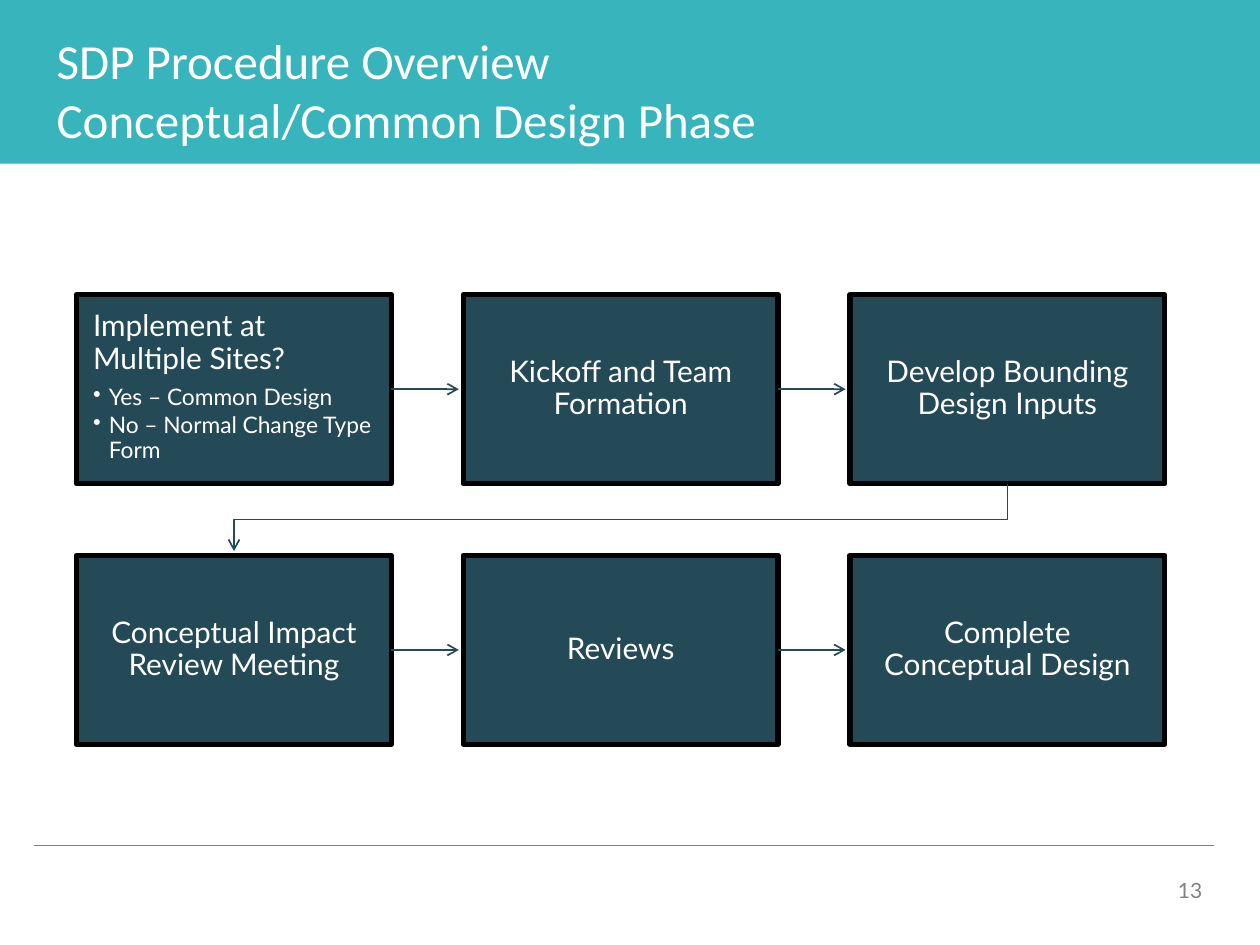
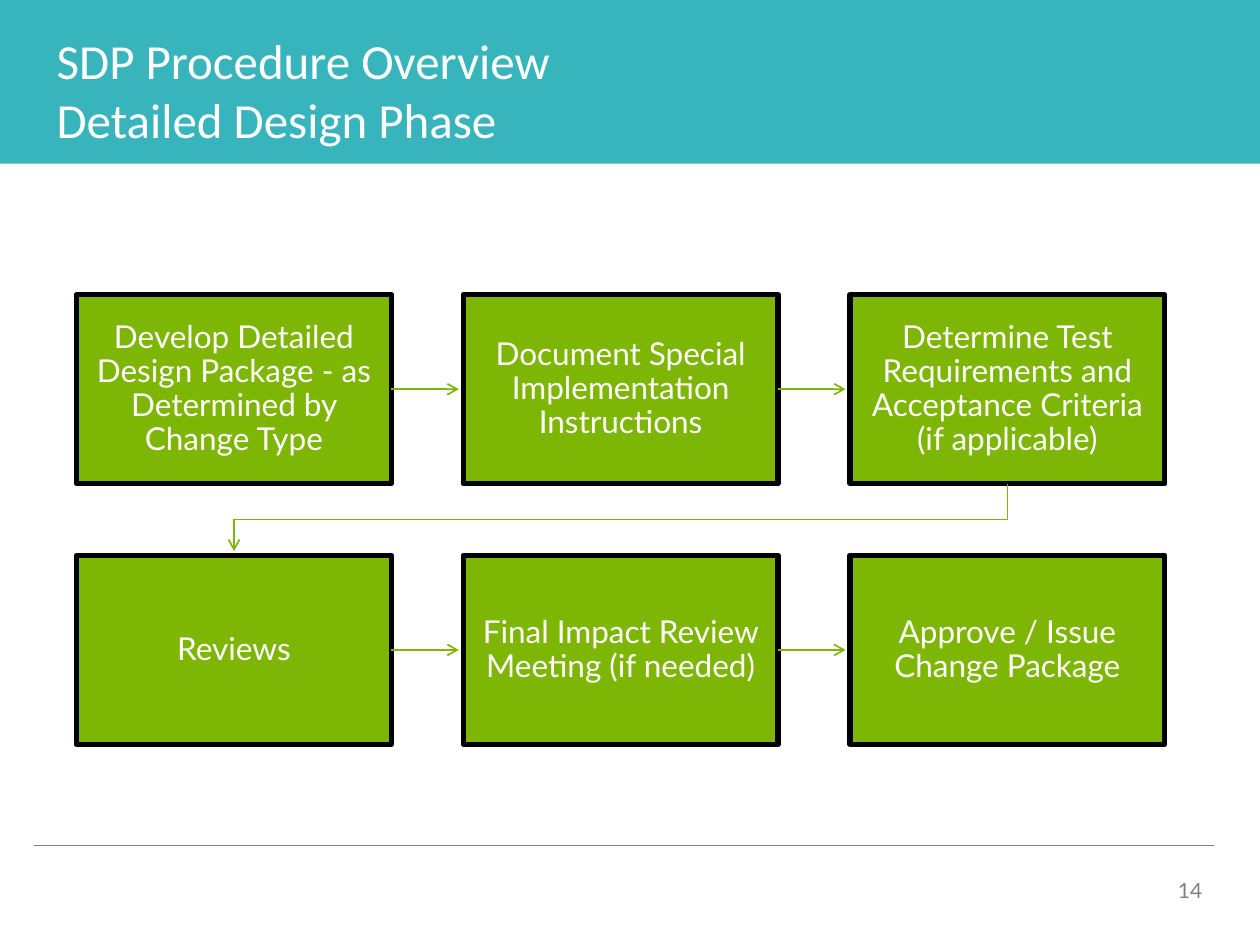
"""Build two process-flow slides for the design phases of the SDP procedure."""
import copy

import pptx
import pptx.dml.color
import pptx.enum.shapes
import pptx.enum.text
import pptx.oxml
import pptx.oxml.ns
import pptx.util
from lxml import etree

Pt = pptx.util.Pt
qn = pptx.oxml.ns.qn
SHAPE = pptx.enum.shapes.MSO_SHAPE
ANCHOR = pptx.enum.text.MSO_ANCHOR
ALIGN = pptx.enum.text.PP_ALIGN

TEAL, NAVY, GREEN = "38B4BC", "244A58", "7EB606"
WHITE, BLACK, GRAY = "FFFFFF", "000000", "808080"

COLUMNS = 3
LEFT, TOP = 43.7, 168.4
BOX_W, BOX_H = 180, 108
PITCH_X, PITCH_Y = 221, 149
ARROW_GAP = 2.5

PHASES = [
    {
        "number": "13", "color": NAVY, "size": 17, "inset": 9.5,
        "title": "SDP Procedure Overview\nConceptual/Common Design Phase",
        "steps": [
            ("Implement at Multiple Sites?", "Yes – Common Design",
             "No – Normal Change Type Form"),
            ("Kickoff and Team Formation",),
            ("Develop Bounding Design Inputs",),
            ("Conceptual Impact Review Meeting",),
            ("Reviews",),
            ("Complete Conceptual Design",),
        ],
    },
    {
        "number": "14", "color": GREEN, "size": 18, "inset": 10,
        "title": "SDP Procedure Overview\nDetailed Design Phase",
        "steps": [
            ("Develop Detailed Design Package - as Determined by Change Type",),
            ("Document Special Implementation Instructions",),
            ("Determine Test Requirements and Acceptance Criteria (if applicable)",),
            ("Reviews",),
            ("Final Impact Review Meeting (if needed)",),
            ("Approve / Issue Change Package",),
        ],
    },
]


def rgb(color):
    return pptx.dml.color.RGBColor.from_string(color)


def write(p, text, size=12, font="Lato", color=WHITE, align=ALIGN.LEFT,
          spacing=1.0, after=0, bullet=False):
    if bullet:
        p.level = 1
        pPr = p._p.get_or_add_pPr()
        pPr.set("marL", str(Pt(9)))
        pPr.set("indent", str(-Pt(9)))
        etree.SubElement(pPr, qn("a:buChar"), char="•")
    p.text = text
    p.alignment = align
    p.line_spacing = spacing
    p.space_before, p.space_after = Pt(0), Pt(after)
    for r in p.runs:
        r.font.size, r.font.name = Pt(size), font
        r.font.color.rgb = rgb(color)
    for br in p._p.findall(qn("a:br")):
        br.append(copy.deepcopy(p.runs[0]._r.rPr))


def set_frame(tf, inset, anchor, wrap=True):
    tf.margin_left = tf.margin_right = Pt(inset)
    tf.margin_top = tf.margin_bottom = Pt(inset)
    tf.vertical_anchor = anchor
    tf.word_wrap = wrap
    tf.auto_size = pptx.enum.text.MSO_AUTO_SIZE.NONE


def add_rect(s, x, y, w, h, fill, line=None):
    sp = s.shapes.add_shape(SHAPE.RECTANGLE, Pt(x), Pt(y), Pt(w), Pt(h))
    sp.shadow.inherit = False
    sp.fill.solid()
    sp.fill.fore_color.rgb = rgb(fill)
    if line:
        sp.line.color.rgb = rgb(line)
        sp.line.width = Pt(3)
    else:
        sp.line.fill.background()
    return sp


def style_line(sp, color, width, arrow=False):
    sp.line.color.rgb = rgb(color)
    sp.line.width = Pt(width)
    if arrow:
        etree.SubElement(sp.line._get_or_add_ln(), qn("a:tailEnd"), type="arrow")


def add_line(s, x1, y1, x2, y2, color, width, arrow=False):
    cn = s.shapes.add_connector(pptx.enum.shapes.MSO_CONNECTOR.STRAIGHT,
                                Pt(x1), Pt(y1), Pt(x2), Pt(y2))
    style_line(cn, color, width, arrow)
    etree.SubElement(cn.element.spPr, qn("a:effectLst"))
    return cn


def add_return_arrow(s, color):
    start_x = LEFT + (COLUMNS - 1) * PITCH_X + BOX_W / 2
    end_x = LEFT + BOX_W / 2
    start_y, end_y = TOP + BOX_H, TOP + PITCH_Y - ARROW_GAP
    mid_y = TOP + (BOX_H + PITCH_Y) / 2
    fb = s.shapes.build_freeform(Pt(start_x), Pt(start_y))
    fb.add_line_segments([(Pt(start_x), Pt(mid_y)), (Pt(end_x), Pt(mid_y)),
                          (Pt(end_x), Pt(end_y))], close=False)
    sp = fb.convert_to_shape()
    sp.shadow.inherit = False
    sp.fill.background()
    style_line(sp, color, 1, arrow=True)


def add_step(s, x, y, lines, color, size, inset):
    box = add_rect(s, x, y, BOX_W, BOX_H, color, BLACK)
    heading, *bullets = lines
    tf = box.text_frame
    set_frame(tf, inset, ANCHOR.TOP if bullets else ANCHOR.MIDDLE)
    write(tf.paragraphs[0], heading, size=size, spacing=0.9, after=6,
          align=ALIGN.LEFT if bullets else ALIGN.CENTER)
    for text in bullets:
        write(tf.add_paragraph(), text, size=13, spacing=0.9, after=2, bullet=True)
    return box


def add_flow(s, steps, color, size, inset):
    for i, lines in enumerate(steps):
        row, col = divmod(i, COLUMNS)
        x, y = LEFT + col * PITCH_X, TOP + row * PITCH_Y
        box = add_step(s, x, y, lines, color, size, inset)
        if col < COLUMNS - 1:
            mid_y = y + BOX_H / 2
            cn = add_line(s, x + BOX_W, mid_y, x + PITCH_X - ARROW_GAP, mid_y,
                          color, 1, arrow=True)
            cn.begin_connect(box, 3)
    add_return_arrow(s, color)


def add_frame(s, title, number):
    add_rect(s, 0, 0, 720, 93.6, TEAL)
    add_line(s, 19.5, 483, 694, 483, GRAY, 0.25)
    tb = s.shapes.add_textbox(Pt(666), Pt(498), Pt(50), Pt(22))
    tb.text_frame.word_wrap = True
    write(tb.text_frame.paragraphs[0], number, color=GRAY)
    sp = s.shapes.title
    sp.left, sp.top, sp.width, sp.height = Pt(32.4), Pt(17.3), Pt(641.5), Pt(77)
    set_frame(sp.text_frame, 0, ANCHOR.TOP, wrap=False)
    write(sp.text_frame.paragraphs[0], title, size=28, font="Calibri")
    sp.element.getparent().append(sp.element)


def main():
    prs = pptx.Presentation()
    prs.slide_width, prs.slide_height = Pt(720), Pt(540)
    for phase in PHASES:
        s = prs.slides.add_slide(prs.slide_layouts[5])
        add_frame(s, phase["title"], phase["number"])
        add_flow(s, phase["steps"], phase["color"], phase["size"], phase["inset"])
    prs.save("out.pptx")


if __name__ == "__main__":
    main()
